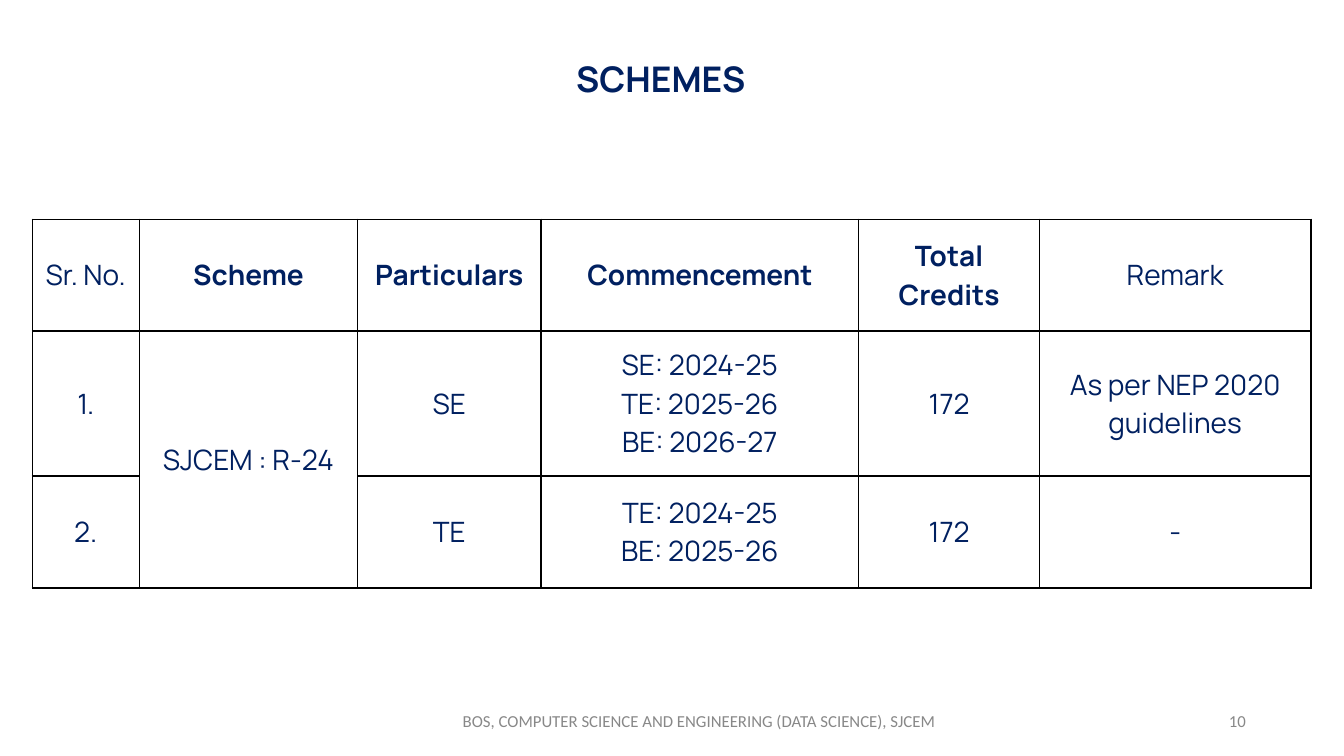
"""Builds the schemes slide with its table of credits."""
from lxml import etree
from pptx import Presentation
from pptx import util as u
from pptx.dml import color
from pptx.enum import text
from pptx.oxml import ns

NAVY, GREY, WHITE, BLACK = "002060", "888888", "FFFFFF", "000000"


def rgb(value):
    """Turn a hex string into a colour."""
    return color.RGBColor.from_string(value)


def write(tf, content, font="Manrope", size=20, ink=NAVY, bold=False,
          align=text.PP_ALIGN.CENTER, spacing=None):
    """Fill a text frame, one paragraph for each line of content."""
    tf.word_wrap = True
    for i, line in enumerate(content.split("\n")):
        p = tf.add_paragraph() if i else tf.paragraphs[0]
        p.alignment = align
        if spacing:
            p.line_spacing = spacing
        r = p.add_run()
        r.text = line
        r.font.name, r.font.size, r.font.bold = font, u.Pt(size), bold
        r.font.color.rgb = rgb(ink)


class Deck:
    """Holds the style and the current slide."""

    def __init__(self, prs):
        """Add a blank slide to work on."""
        self.s = prs.slides.add_slide(prs.slide_layouts[6])
        self.border, self.border_width = BLACK, 1

    def label(self, x, y, w, h, content, **style):
        """Add a vertically centred text box."""
        sp = self.s.shapes.add_textbox(*map(u.Pt, (x, y, w, h)))
        sp.text_frame.vertical_anchor = text.MSO_ANCHOR.MIDDLE
        write(sp.text_frame, content, **style)

    def outline(self, cell):
        """Draw the four borders of a cell."""
        tc_pr = cell._tc.get_or_add_tcPr()
        for side in ("lnL", "lnR", "lnT", "lnB"):
            ln = etree.SubElement(tc_pr, ns.qn(f"a:{side}"),
                                  w=str(u.Pt(self.border_width)))
            fill = etree.SubElement(ln, ns.qn("a:solidFill"))
            etree.SubElement(fill, ns.qn("a:srgbClr"), val=self.border)

    def table(self, x, y, widths, heights, rows, bold_cells, merges):
        """Add a bordered table with centred text."""
        tbl = self.s.shapes.add_table(
            len(rows), len(widths), u.Pt(x), u.Pt(y),
            u.Pt(sum(widths)), u.Pt(sum(heights))).table
        tbl.first_row = tbl.horz_banding = False
        for col, width in zip(tbl.columns, widths):
            col.width = u.Pt(width)
        for row, height in zip(tbl.rows, heights):
            row.height = u.Pt(height)
        for start, end in merges:
            tbl.cell(*start).merge(tbl.cell(*end))
        for i, row in enumerate(rows):
            for j, content in enumerate(row):
                cell = tbl.cell(i, j)
                self.outline(cell)
                cell.fill.solid()
                cell.fill.fore_color.rgb = rgb(WHITE)
                cell.vertical_anchor = text.MSO_ANCHOR.MIDDLE
                if content:
                    write(cell.text_frame, content, bold=(i, j) in bold_cells)


def main():
    """Build and save the slide."""
    prs = Presentation()
    prs.slide_width, prs.slide_height = u.Pt(960), u.Pt(540)
    deck = Deck(prs)
    deck.label(180, 40, 584, 36, "SCHEMES", size=25.2, bold=True, spacing=0.9)
    rows = [
        ["Sr. No.", "Scheme", "Particulars", "Commencement", "Total Credits",
         "Remark"],
        ["1.", "SJCEM : R-24", "SE", "SE: 2024-25\nTE: 2025-26\nBE: 2026-27",
         "172", "As per NEP 2020 guidelines"],
        ["2.", "", "TE", "TE: 2024-25\nBE: 2025-26", "172", "-"],
    ]
    deck.table(23, 156.5, [76.5, 156, 131, 227, 129, 194], [80, 103.5, 80],
               rows, bold_cells=[(0, j) for j in range(1, 5)],
               merges=[((1, 1), (2, 1))])
    footer = dict(font="Calibri", size=12, ink=GREY)
    deck.label(318, 500.5, 363, 28.5,
               "BOS, COMPUTER SCIENCE AND ENGINEERING (DATA SCIENCE), SJCEM",
               **footer)
    deck.label(681, 500.5, 216, 28.5, "10", align=text.PP_ALIGN.RIGHT, **footer)
    prs.save("out.pptx")


if __name__ == "__main__":
    main()
